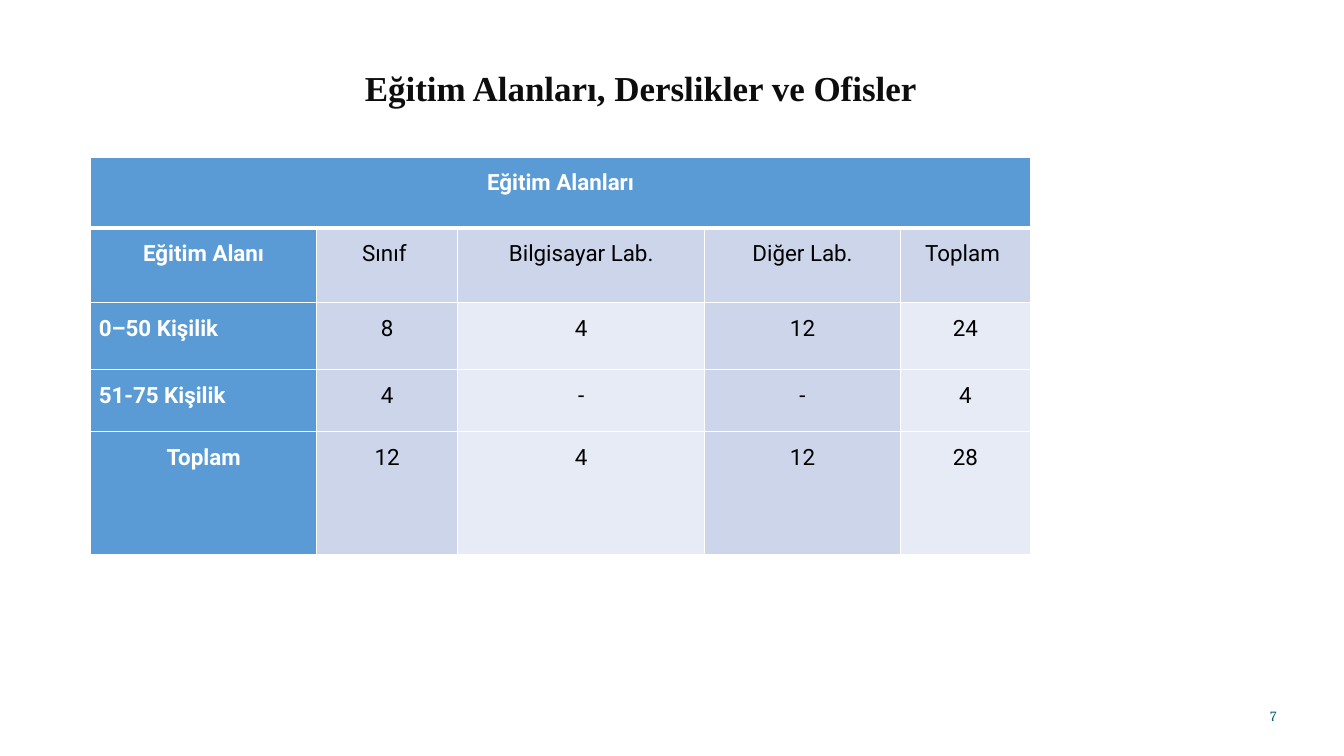
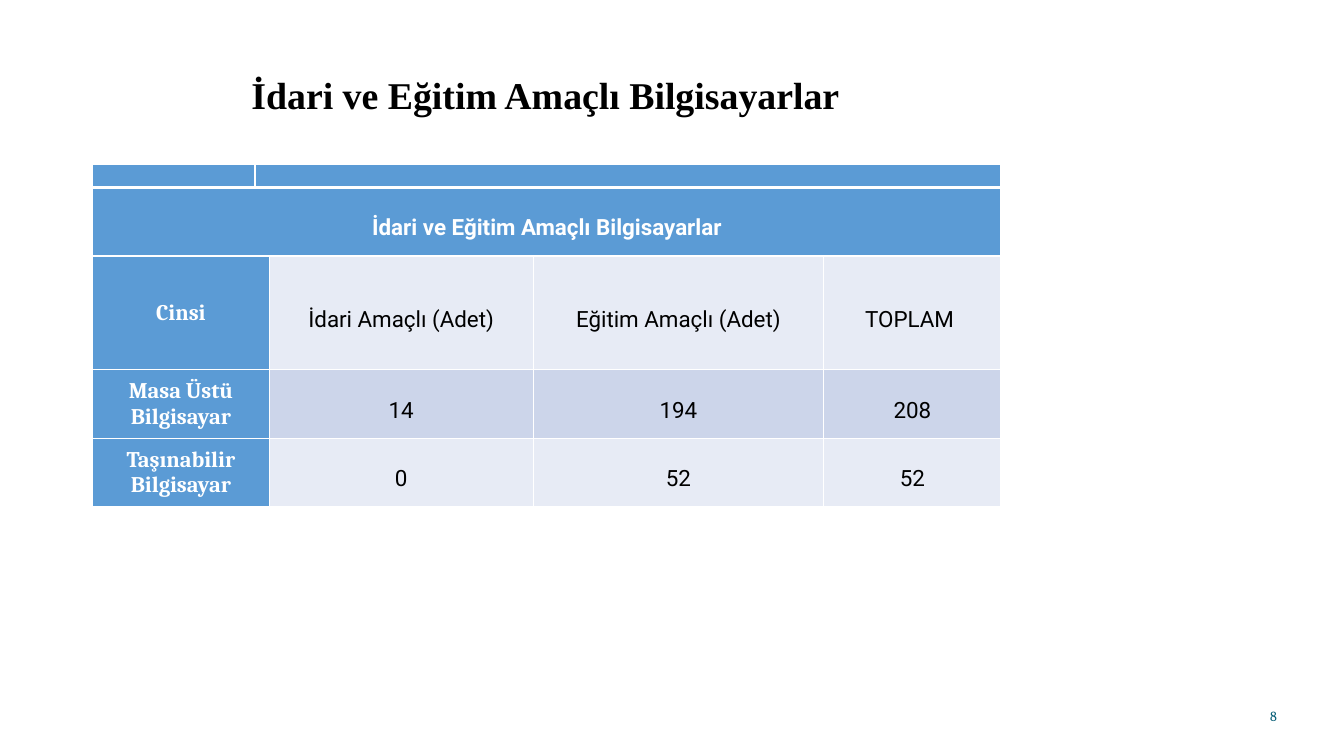
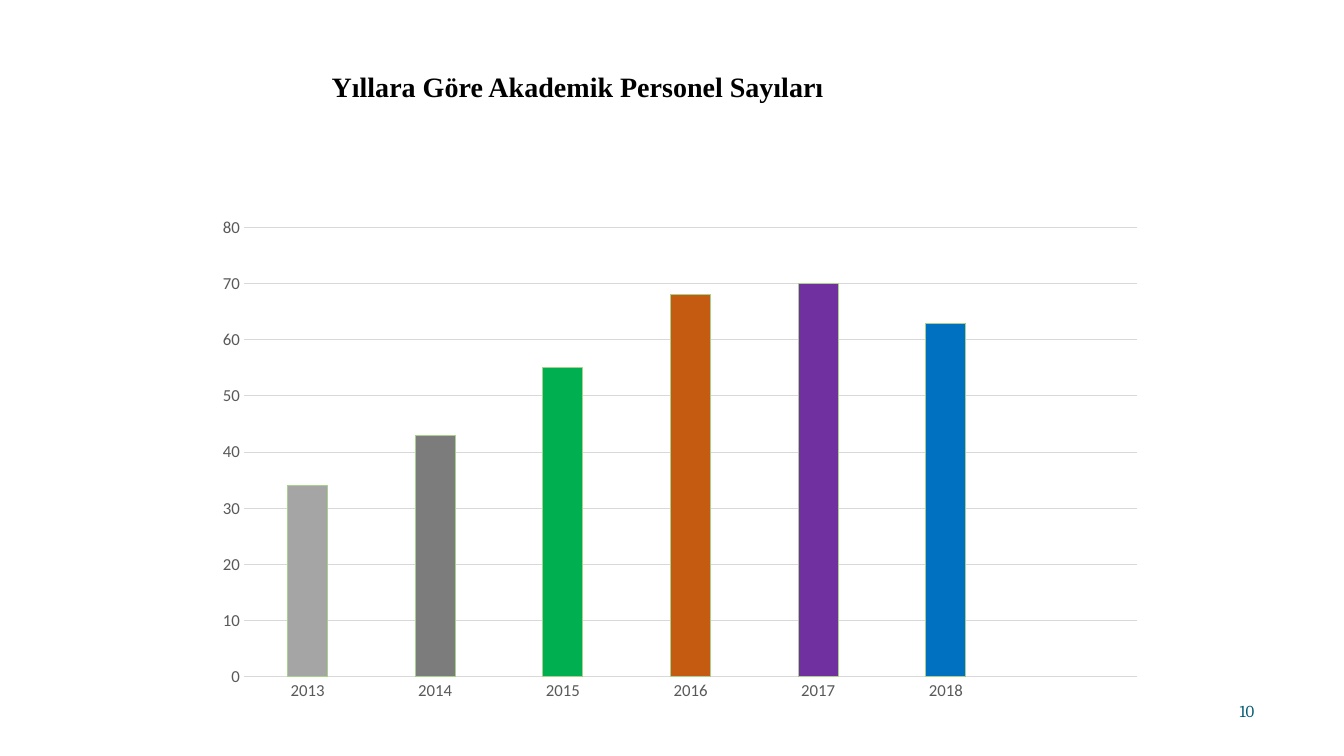
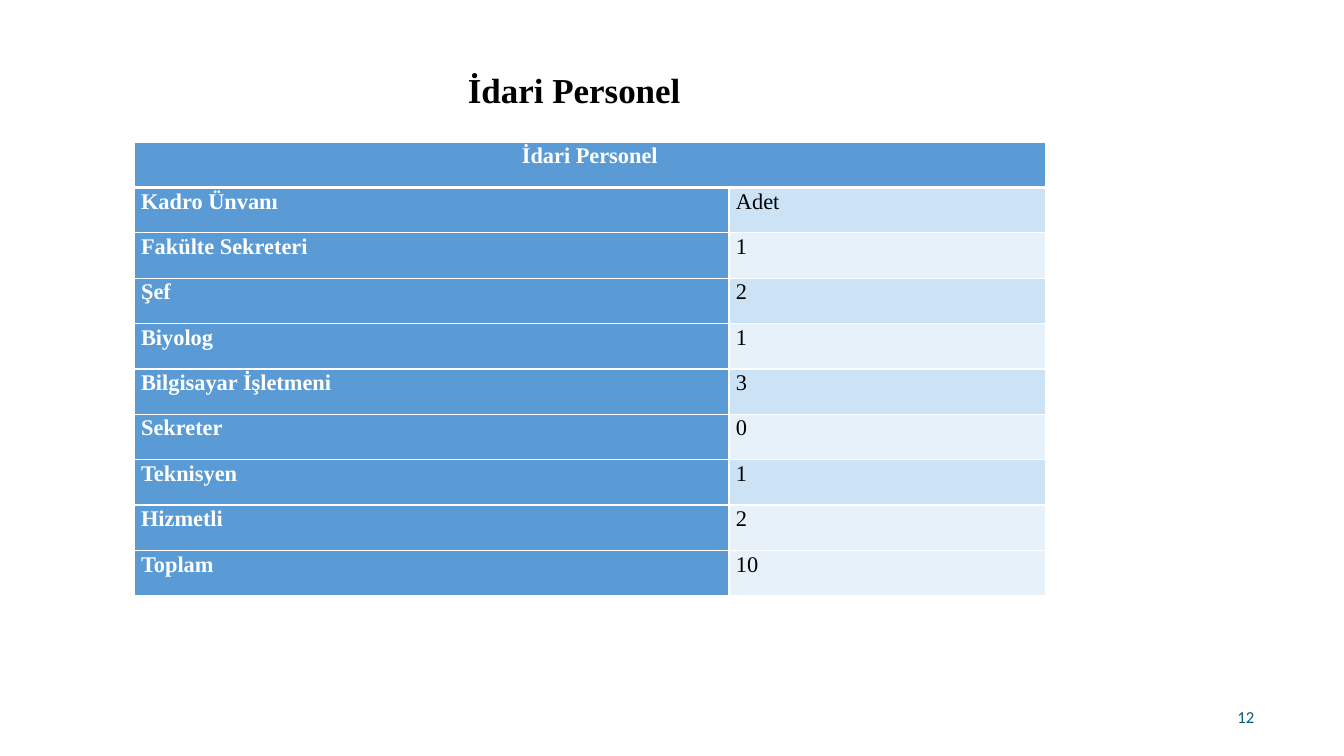
"""Build four slides on teaching spaces, computers and staff of a faculty."""
from pptx import Presentation
from pptx import util as u
from pptx.chart import data
from pptx.dml import color
from pptx.enum import chart, text
from pptx.oxml import ns, parse_xml

PX = 9144
BLUE, WHITE, BLACK, TEAL = "5B9BD5", "FFFFFF", "000000", "045C75"
GREY, GRID, GREEN = "595959", "D9D9D9", "A9D18E"
SERIF, SANS, CAMBRIA, CALIBRI = "Times New Roman", "Roboto", "Cambria", "Calibri"
LAVENDER = {"h": BLUE, "d": "CCD5EA", "l": "E7EBF5"}
SKY = {"h": BLUE, "d": "CCE3F5", "l": "E7F1FA"}
LEFT, CENTER, RIGHT = text.PP_ALIGN.LEFT, text.PP_ALIGN.CENTER, text.PP_ALIGN.RIGHT
TOP, MIDDLE = text.MSO_ANCHOR.TOP, text.MSO_ANCHOR.MIDDLE
rgb = color.RGBColor.from_string


def add_text(s, box, txt, size, font, hue, bold=False, align=CENTER, spacing=1.0):
    tf = s.shapes.add_textbox(*(v * PX for v in box)).text_frame
    tf.word_wrap = True
    tf.vertical_anchor = MIDDLE
    p = tf.paragraphs[0]
    p.text = txt
    p.alignment, p.line_spacing = align, spacing
    p.font.size, p.font.name, p.font.bold = u.Pt(size), font, bold
    p.font.color.rgb = rgb(hue)


def add_table(s, left, top, widths, heights, rows, shades, fills, font, spacing, inset, anchor=TOP):
    """Draw a grid; None continues the cell to its left, shade h is a header."""
    tbl = s.shapes.add_table(len(rows), len(widths), left * PX, top * PX,
                             sum(widths) * PX, sum(heights) * PX).table
    tbl.first_row = tbl.horz_banding = False
    for col, width in zip(tbl.columns, widths):
        col.width = width * PX
    for i, (row, shade) in enumerate(zip(rows, shades)):
        tbl.rows[i].height = heights[i] * PX
        for j, txt in enumerate(row):
            cell = tbl.cell(i, j)
            cell.margin_left = cell.margin_right = inset * PX
            cell.margin_top = cell.margin_bottom = 0
            cell.vertical_anchor = anchor
            tcPr = cell._tc.get_or_add_tcPr()
            for side in "LRTB":
                thick = (i, side) in ((0, "B"), (1, "T"))
                tcPr.append(parse_xml(
                    f'<a:ln{side} {ns.nsdecls("a")} w="{u.Pt(3 if thick else 1)}"><a:solidFill>'
                    f'<a:srgbClr val="{WHITE}"/></a:solidFill></a:ln{side}>'))
            cell.fill.solid()
            cell.fill.fore_color.rgb = rgb(fills[shade[j]])
            p = cell.text_frame.paragraphs[0]
            if txt:
                p.text = txt
                p.alignment, p.line_spacing = CENTER, spacing
                p.font.size, p.font.name, p.font.bold = u.Pt(16), font, shade[j] == "h"
                p.font.color.rgb = rgb(WHITE if shade[j] == "h" else BLACK)
            else:
                p._p.get_or_add_endParaRPr().set("sz", "800")
        starts = [j for j, txt in enumerate(row) if txt is not None]
        for start, stop in zip(starts, starts[1:] + [len(row)]):
            if stop - start > 1:
                tbl.cell(i, start).merge(tbl.cell(i, stop - 1))
    return tbl


prs = Presentation()
prs.slide_width, prs.slide_height = 1333 * PX, 750 * PX

slides = [
    ("Eğitim Alanları, Derslikler ve Ofisler", (253, 58, 765, 63), 25, "0D0D0D", 0.9,
     "7", (1250, 690, 83, 40), 10, CAMBRIA, LEFT),
    ("İdari ve Eğitim Amaçlı Bilgisayarlar", (92, 40, 898, 84), 27, BLACK, 1.5,
     "8", (1250, 690, 83, 40), 10, CAMBRIA, LEFT),
    ("Yıllara Göre Akademik Personel Sayıları", (187, 68, 772, 39), 20, BLACK, 0.9,
     "10", (1171, 685, 83, 40), 12, CAMBRIA, RIGHT),
    ("İdari Personel", (308, 63, 523, 52), 25, BLACK, 1.0,
     "12", (1171, 691, 83, 40), 12, CALIBRI, RIGHT),
]
for title, box, size, hue, spacing, number, number_box, number_size, number_font, align in slides:
    s = prs.slides.add_slide(prs.slide_layouts[6])
    add_text(s, box, title, size, SERIF, hue, True, spacing=spacing)
    add_text(s, number_box, number, number_size, number_font, TEAL, align=align)
rooms_slide, computers_slide, academics_slide, staff_slide = prs.slides

rooms = [
    ["Eğitim Alanları", None, None, None, None],
    ["Eğitim Alanı", "Sınıf ", "Bilgisayar Lab.", "Diğer Lab.", "Toplam "],
    ["0–50 Kişilik", "8", "4", "12", "24"],
    ["51-75 Kişilik", "4", "-", "-", "4"],
    ["Toplam", "12", "4", "12", "28"],
]
tbl = add_table(rooms_slide, 90, 156, [224, 140, 245, 194, 129], [70, 74, 67, 61, 122], rooms,
                ["hhhhh", "hdddd"] + ["hdldl"] * 3, LAVENDER, SANS, 1.5, 8)
for i in (2, 3):
    tbl.cell(i, 0).text_frame.paragraphs[0].alignment = LEFT

computers = [
    ["", "", None, None, None],
    ["İdari ve Eğitim Amaçlı Bilgisayarlar", None, None, None, None],
    ["Cinsi", None, "İdari Amaçlı (Adet)", "Eğitim Amaçlı (Adet)", "TOPLAM "],
    ["Masa Üstü Bilgisayar", None, "14", "194", "208"],
    ["Taşınabilir Bilgisayar", None, "0", "52", "52"],
]
tbl = add_table(computers_slide, 92, 163, [161, 12, 262, 288, 176], [23, 68, 113, 68, 68], computers,
                ["hhhhh", "hhhhh", "hhlll", "hhddd", "hhlll"], LAVENDER, SANS, 1.5, 5, MIDDLE)
for i in (2, 3, 4):
    p = tbl.cell(i, 0).text_frame.paragraphs[0]
    p.font.name, p.line_spacing = CAMBRIA, 1.0

cd = data.CategoryChartData()
cd.categories = ["2013", "2014", "2015", "2016", "2017", "2018", ""]
cd.add_series("Series 1", [34, 43, 55, 68, 70, 63, None])
ch = academics_slide.shapes.add_chart(chart.XL_CHART_TYPE.COLUMN_CLUSTERED, 202 * PX, 206 * PX,
                                      945 * PX, 499 * PX, cd).chart
ch.has_legend = ch.has_title = False
ch.font.name, ch.font.size = CALIBRI, u.Pt(12)
ch.font.color.rgb = rgb(GREY)
for axis in (ch.category_axis, ch.value_axis):
    axis.major_tick_mark = axis.minor_tick_mark = chart.XL_TICK_MARK.NONE
ch.value_axis.minimum_scale, ch.value_axis.maximum_scale, ch.value_axis.major_unit = 0, 80, 10
ch.value_axis.format.line.fill.background()
for line in (ch.category_axis.format.line, ch.value_axis.major_gridlines.format.line):
    line.color.rgb, line.width = rgb(GRID), u.Pt(0.75)
plot = ch.plots[0]
plot.gap_width, plot.vary_by_categories = 219, False
for i, hue in enumerate(["A5A5A5", "7C7C7C", "00B050", "C55A11", "7030A0", "0070C0"]):
    bar = plot.series[0].points[i].format
    bar.fill.solid()
    bar.fill.fore_color.rgb = rgb(hue)
    bar.line.color.rgb, bar.line.width = rgb(GREEN), u.Pt(0.75)

staff = [
    ["İdari Personel", None],
    ["Kadro Ünvanı", "Adet"],
    ["Fakülte Sekreteri", "1"],
    ["Şef", "2"],
    ["Biyolog", "1"],
    ["Bilgisayar İşletmeni", "3"],
    ["Sekreter", "0"],
    ["Teknisyen", "1"],
    ["Hizmetli", "2"],
    ["Toplam", "10"],
]
tbl = add_table(staff_slide, 133, 141, [590, 314], [45] * len(staff), staff,
                ["hh"] + ["hd", "hl"] * 4 + ["hl"], SKY, SERIF, 1.07, 7)
for i in range(1, len(staff)):
    for j in range(2):
        tbl.cell(i, j).text_frame.paragraphs[0].alignment = LEFT

prs.save("out.pptx")
